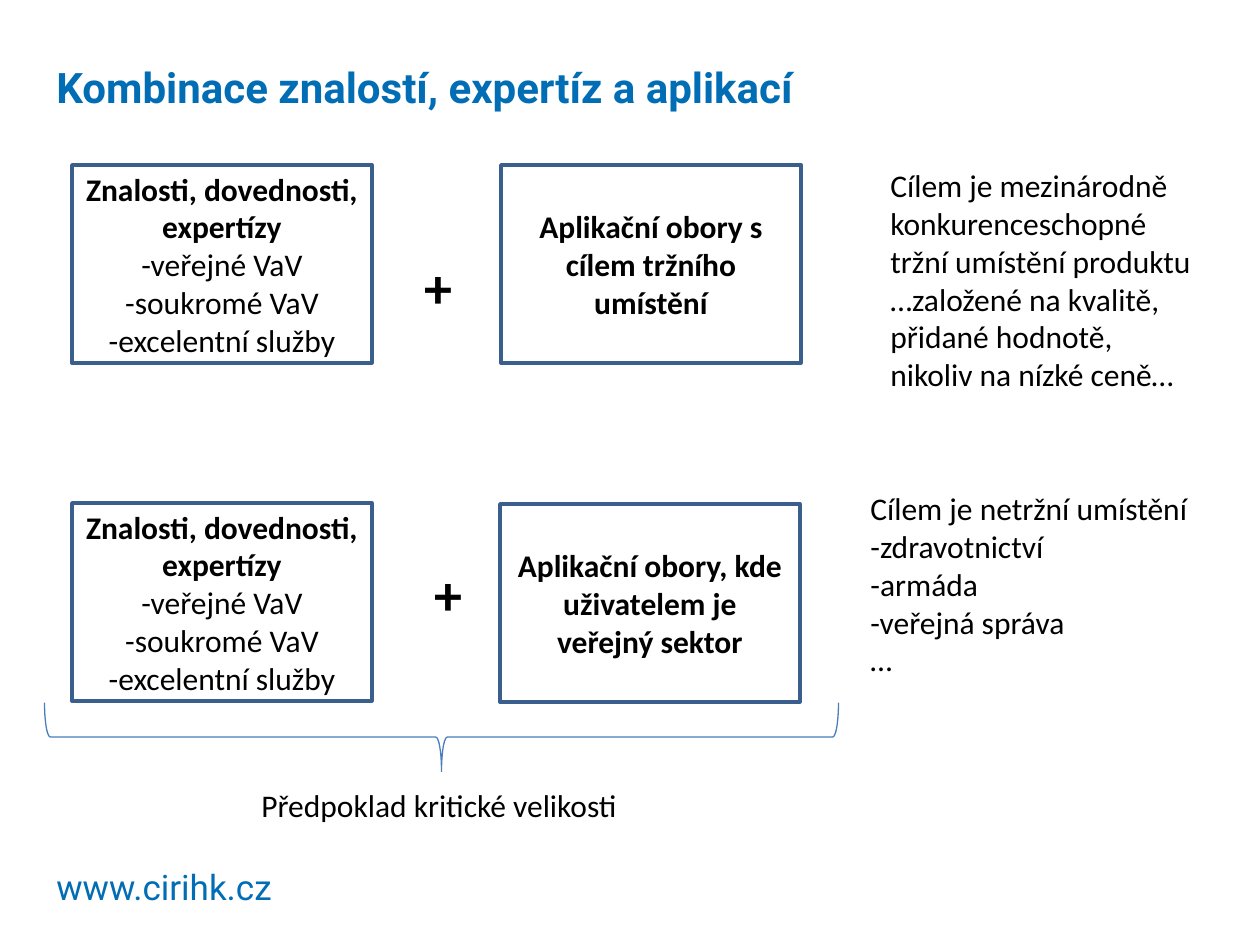
from pptx import Presentation
from pptx import util as u
from pptx.dml.color import RGBColor
from pptx.enum import shapes, text

PX = 914400 / 126
BLUE, BLACK, WHITE = "006DB5", "000000", "FFFFFF"
BORDER, BRACE = "3A5F8C", "4B7EBC"
CARD_SIZE = (300, 198)

HEADINGS = [
    ("www.cirihk.cz", (44, 859, 277, 55), 20, False),
    ("Kombinace znalostí, expertíz a aplikací", (44, 55, 953, 89), 24, True),
]
KNOWLEDGE = ["Znalosti, dovednosti, expertízy", "-veřejné VaV",
             "-soukromé VaV", "-excelentní služby"]
CARDS = [
    (KNOWLEDGE, (72, 165)),
    (KNOWLEDGE, (72, 503)),
    (["Aplikační obory s cílem tržního umístění"], (501, 165)),
    (["Aplikační obory, kde uživatelem je veřejný sektor"], (500, 504)),
]
PLUSES = [(412, 246, 79, 81), (422, 553, 79, 81)]
NOTES = [
    (["Cílem je netržní umístění", "-zdravotnictví", "-armáda",
      "-veřejná správa", "…"], (858, 483, 346, 204)),
    (["Cílem je mezinárodně", "konkurenceschopné", "tržní umístění produktu",
      "…založené na kvalitě,", "přidané hodnotě,", "nikoliv na nízké ceně…"],
     (878, 160, 329, 242)),
    (["Předpoklad kritické velikosti"], (249, 780, 384, 50)),
]
BRACE_AREA = (407, 340, 69, 794)


def emu(*lengths):
    return [u.Emu(round(length * PX)) for length in lengths]


def color(value):
    return RGBColor.from_string(value)


def write(box, lines, size, bold_lines=0, font="Calibri", ink=BLACK, align=text.PP_ALIGN.LEFT):
    frame = box.text_frame
    for index, line in enumerate(lines):
        para = frame.add_paragraph() if index else frame.paragraphs[0]
        para.alignment = align
        span = para.add_run()
        span.text = line
        span.font.name = font
        span.font.size = u.Pt(size)
        span.font.bold = index < bold_lines
        span.font.color.rgb = color(ink)


def add_text(page, lines, area, size, wrap=True, fit=True, **style):
    box = page.shapes.add_textbox(*emu(*area))
    box.text_frame.word_wrap = wrap
    if fit:
        box.text_frame.auto_size = text.MSO_AUTO_SIZE.SHAPE_TO_FIT_TEXT
    write(box, lines, size, **style)


def add_outline(page, kind, area, line, width):
    shape = page.shapes.add_shape(kind, *emu(*area))
    shape.shadow.inherit = False
    shape.line.color.rgb = color(line)
    shape.line.width = u.Pt(width)
    return shape


def add_card(page, lines, corner):
    card = add_outline(page, shapes.MSO_SHAPE.RECTANGLE, corner + CARD_SIZE, BORDER, 2)
    card.fill.solid()
    card.fill.fore_color.rgb = color(WHITE)
    card.text_frame.word_wrap = True
    card.text_frame.vertical_anchor = text.MSO_ANCHOR.MIDDLE
    write(card, lines, 18, bold_lines=1, align=text.PP_ALIGN.CENTER)


def main():
    deck = Presentation()
    deck.slide_width, deck.slide_height = emu(1260, 945)
    page = deck.slides.add_slide(deck.slide_layouts[6])
    for line, area, size, bold in HEADINGS:
        add_text(page, [line], area, size, fit=not bold,
                 bold_lines=int(bold), font="Roboto", ink=BLUE)
    for lines, corner in CARDS:
        add_card(page, lines, corner)
    for area in PLUSES:
        add_text(page, ["+"], area, 32, bold_lines=1)
    brace = add_outline(page, shapes.MSO_SHAPE.RIGHT_BRACE, BRACE_AREA, BRACE, 0.75)
    brace.fill.background()
    brace.rotation = 90
    for lines, area in NOTES:
        add_text(page, lines, area, 18, wrap=False)
    deck.save("out.pptx")


if __name__ == "__main__":
    main()
